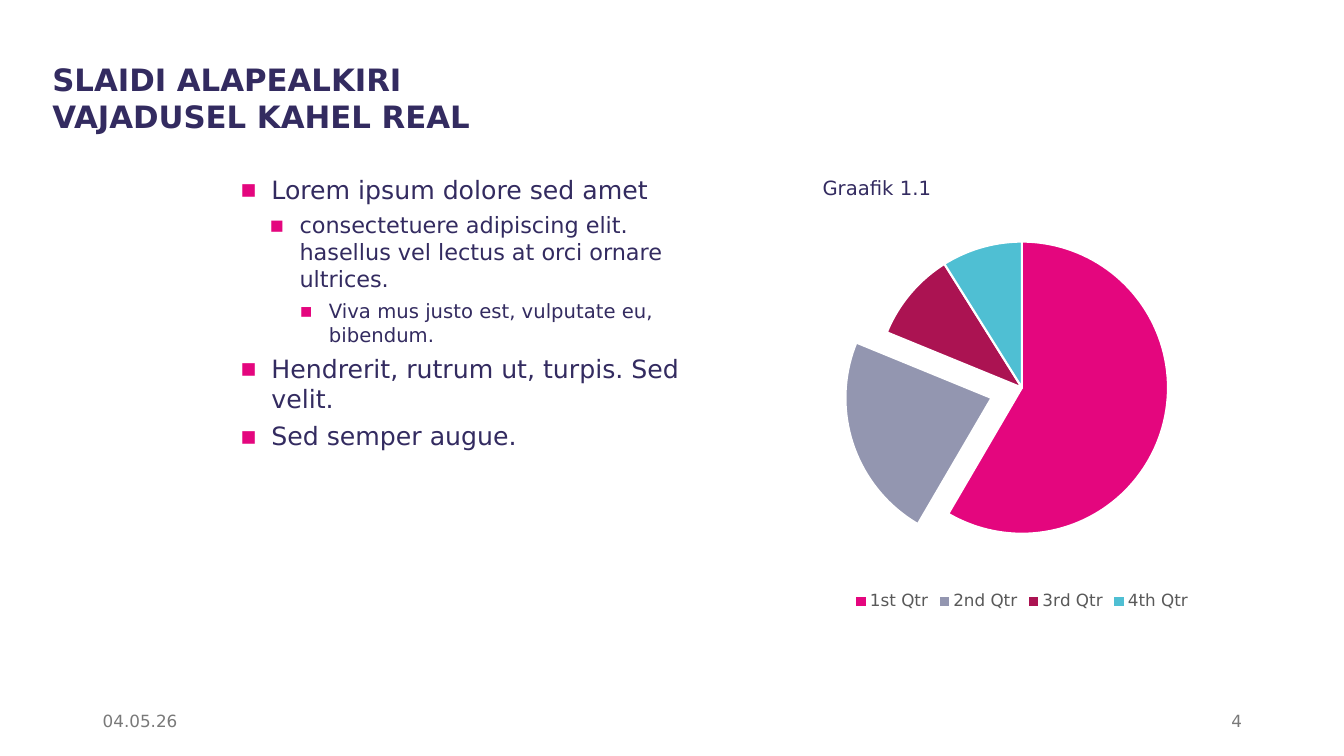
from lxml import etree
from pptx import Presentation
from pptx.chart.data import CategoryChartData
from pptx.dml.color import RGBColor
from pptx.enum.chart import XL_CHART_TYPE, XL_LEGEND_POSITION
from pptx.enum.text import MSO_ANCHOR, MSO_AUTO_SIZE, PP_ALIGN
from pptx.oxml.ns import qn
from pptx.util import Cm, Pt

PIE = XL_CHART_TYPE.PIE
BOTTOM = XL_LEGEND_POSITION.BOTTOM
TOP, MIDDLE = MSO_ANCHOR.TOP, MSO_ANCHOR.MIDDLE
NO_FIT = MSO_AUTO_SIZE.NONE
LEFT, RIGHT = PP_ALIGN.LEFT, PP_ALIGN.RIGHT

FONT = "DejaVu Sans"
COLORS = {
    "text": "332B60",
    "pink": "E4067E",
    "lilac": "9396B0",
    "wine": "AB1352",
    "sky": "4FBFD3",
    "legend": "595959",
    "footer": "797979",
    "white": "FFFFFF",
}

TITLE = "SLAIDI ALAPEALKIRI\vVAJADUSEL KAHEL REAL"
BULLETS = [
    (0, "Lorem ipsum dolore sed amet"),
    (1, "consectetuere adipiscing elit. hasellus vel lectus at orci ornare ultrices."),
    (2, "Viva mus justo est, vulputate eu, bibendum."),
    (0, "Hendrerit, rutrum ut, turpis. Sed velit."),
    (0, "Sed semper augue."),
]
LEVELS = [(18, 0.79, 0.79), (16, 1.5, 0.76), (14, 2.24, 0.74)]
QUARTERS = [
    ("1st Qtr", 59, "pink"),
    ("2nd Qtr", 23, "lilac"),
    ("3rd Qtr", 10, "wine"),
    ("4th Qtr", 9, "sky"),
]
EXPLODED_QUARTER, EXPLOSION = 1, 22
CAPTION = "Graafik 1.1"
FOOTERS = [("04.05.26", 2.34, LEFT), ("4", 23.93, RIGHT)]


def color(name):
    return RGBColor.from_string(COLORS[name])


def set_font(font, size, color_name, bold=False):
    font.name = FONT
    font.size = Pt(size)
    font.bold = bold
    font.color.rgb = color(color_name)


def place(shape, left, top, width, height):
    shape.left, shape.top = Cm(left), Cm(top)
    shape.width, shape.height = Cm(width), Cm(height)


def prepare_frame(shape, anchor=TOP, inset=True):
    frame = shape.text_frame
    frame.word_wrap = True
    frame.auto_size = NO_FIT
    frame.vertical_anchor = anchor
    if not inset:
        frame.margin_left = frame.margin_right = Cm(0)
        frame.margin_top = frame.margin_bottom = Cm(0)
    return frame


def add_bullet(paragraph, indent, hanging):
    properties = paragraph._p.get_or_add_pPr()
    properties.set("marL", str(Cm(indent)))
    properties.set("indent", str(-Cm(hanging)))
    bullet_color = etree.SubElement(properties, qn("a:buClr"))
    etree.SubElement(bullet_color, qn("a:srgbClr"), val=COLORS["pink"])
    etree.SubElement(properties, qn("a:buFont"), typeface=FONT)
    etree.SubElement(properties, qn("a:buChar"), char="▪")


def add_title(slide):
    place(slide.shapes.title, 1.32, 1.52, 16.97, 2.11)
    frame = prepare_frame(slide.shapes.title, inset=False)
    frame.text = TITLE
    paragraph = frame.paragraphs[0]
    paragraph.alignment = LEFT
    set_font(paragraph.font, 22, "text", bold=True)


def add_list(slide):
    body = slide.placeholders[1]
    place(body, 6.05, 4.39, 12.09, 10.95)
    frame = prepare_frame(body, inset=False)
    for index, (level, text) in enumerate(BULLETS):
        size, indent, hanging = LEVELS[level]
        paragraph = frame.add_paragraph() if index else frame.paragraphs[0]
        paragraph.text = text
        paragraph.level = level
        paragraph.space_before = Pt(5 if index else 0)
        add_bullet(paragraph, indent, hanging)
        set_font(paragraph.font, size, "text")


def add_pie(slide):
    data = CategoryChartData()
    data.categories = [name for name, _, _ in QUARTERS]
    data.add_series("Series 1", [value for _, value, _ in QUARTERS])
    frame = slide.shapes.add_chart(PIE, Cm(19.86), Cm(4.93), Cm(11.79), Cm(10.57), data)
    chart = frame.chart
    chart.has_title = False
    chart.font.name = FONT
    chart.font.size = Pt(10)
    chart.has_legend = True
    chart.legend.position = BOTTOM
    chart.legend.include_in_layout = False
    set_font(chart.legend.font, 12, "legend")

    plot = chart.plots[0]
    plot.vary_by_categories = True
    series = plot.series[0]
    for index, (_, _, color_name) in enumerate(QUARTERS):
        slice_format = series.points[index].format
        slice_format.fill.solid()
        slice_format.fill.fore_color.rgb = color(color_name)
        slice_format.line.color.rgb = color("white")
        slice_format.line.width = Pt(1.5)
    point = series._element.findall(qn("c:dPt"))[EXPLODED_QUARTER]
    explosion = etree.Element(qn("c:explosion"), val=str(EXPLOSION))
    point.find(qn("c:spPr")).addprevious(explosion)


def add_label(slide, text, box, size, color_name, anchor=TOP, align=LEFT, inset=True):
    label = slide.shapes.add_textbox(*map(Cm, box))
    frame = prepare_frame(label, anchor, inset)
    frame.text = text
    paragraph = frame.paragraphs[0]
    paragraph.alignment = align
    set_font(paragraph.font, size, color_name)
    return paragraph


def main():
    presentation = Presentation()
    presentation.slide_width, presentation.slide_height = Cm(33.87), Cm(19.05)
    slide = presentation.slides.add_slide(presentation.slide_layouts[1])
    add_title(slide)
    add_list(slide)
    add_pie(slide)
    caption_box = (20.73, 4.5, 9.96, 0.86)
    caption = add_label(slide, CAPTION, caption_box, 14, "text", inset=False)
    caption.line_spacing = 0.9
    for text, left, align in FOOTERS:
        add_label(slide, text, (left, 17.65, 7.62, 1.02), 12, "footer", MIDDLE, align)
    presentation.save("out.pptx")


if __name__ == "__main__":
    main()
